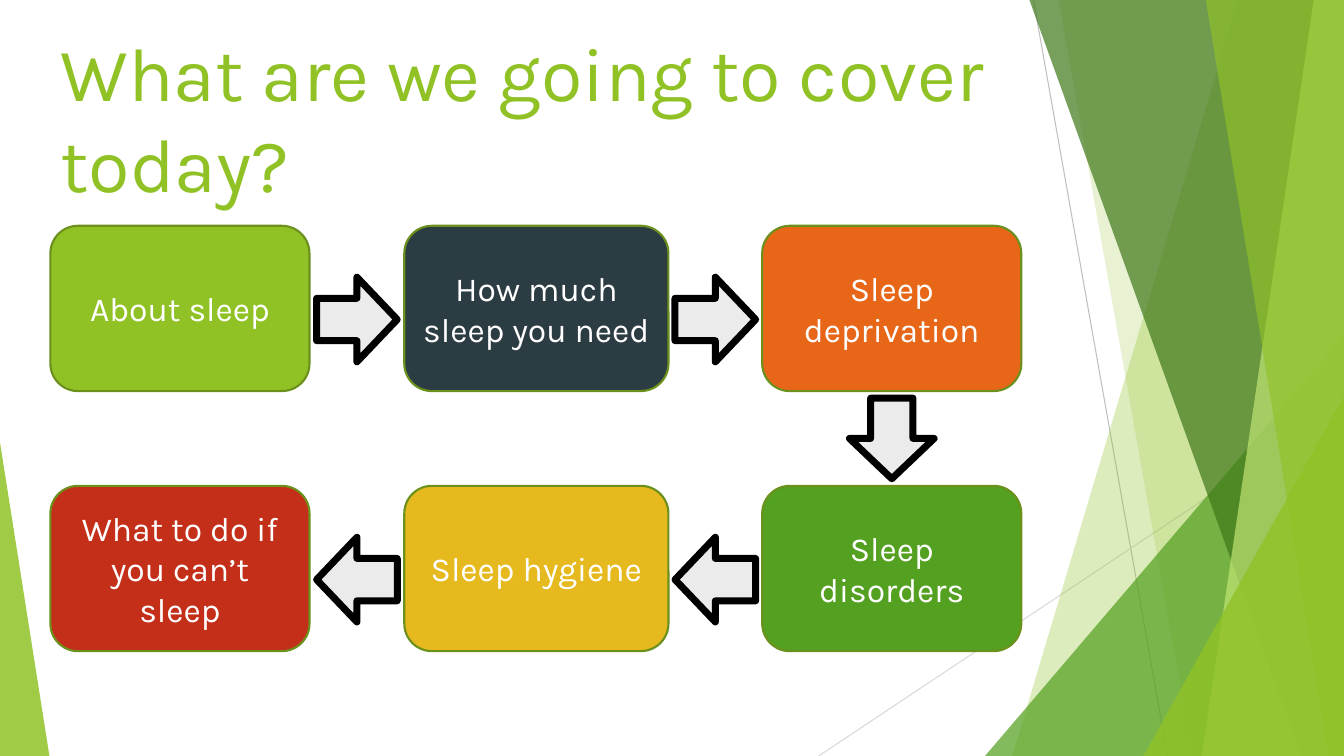
"""Build the agenda slide: six sleep topics in a looping flow beside green facets."""
from lxml.etree import SubElement
from pptx import Presentation
from pptx.dml.color import RGBColor
from pptx.enum.shapes import MSO_CONNECTOR, MSO_SHAPE
from pptx.enum.text import MSO_ANCHOR, MSO_AUTO_SIZE, PP_ALIGN
from pptx.oxml.ns import qn
from pptx.util import Inches, Pt

COLOURS = {
    "lime": "90C226", "green": "54A021", "forest": "3F7819", "pale": "C0E474",
    "slate": "2C3C43", "orange": "E76618", "gold": "E6B91E", "red": "C42F1A",
    "edge": "6B901C", "arrow": "EBEBEB", "black": "000000", "white": "FFFFFF",
    "grey": "BFBFBF", "silver": "D9D9D9",
}
WIDTH, HEIGHT = 13.33, 7.5


def paint(shape, fill, opacity=100, line=None, weight=0):
    """Fill and outline a shape, without shadow."""
    shape.shadow.inherit = False
    shape.fill.solid()
    shape.fill.fore_color.rgb = RGBColor.from_string(COLOURS[fill])
    if opacity < 100:
        colour = shape.fill._xPr.find(qn("a:solidFill"))[0]
        SubElement(colour, qn("a:alpha"), val=str(opacity * 1000))
    if line:
        shape.line.color.rgb = RGBColor.from_string(COLOURS[line])
        shape.line.width = Pt(weight)
    else:
        shape.line.fill.background()


def write(para, text, size, colour, align):
    """Add one formatted run to a paragraph."""
    para.alignment = align
    span = para.add_run()
    span.text = text
    span.font.name = "Karla"
    span.font.size = Pt(size)
    span.font.color.rgb = RGBColor.from_string(COLOURS[colour])


deck = Presentation()
deck.slide_width, deck.slide_height = Inches(WIDTH), Inches(HEIGHT)
page = deck.slides.add_slide(deck.slide_layouts[5])
shapes = page.shapes

rays = [
    ("grey", (10.25, 0), (11.58, HEIGHT)),
    ("silver", (WIDTH, 4.03), (8.12, HEIGHT)),
]
for colour, start, end in rays:
    ray = shapes.add_connector(MSO_CONNECTOR.STRAIGHT, *map(Inches, start + end))
    ray.line.color.rgb = RGBColor.from_string(COLOURS[colour])
    ray.line.width = Pt(0.75)
    SubElement(ray._element.spPr, qn("a:effectLst"))

bands = [
    ("lime", 30, 12.28, 10.04),
    ("lime", 20, 10.5, 11.83),
    ("green", 72, (9.77, 3.33, 3.56, 4.17), 1),
    ("forest", 70, 10.21, 12.91),
    ("pale", 70, 13.03, 11.92),
    ("lime", 65, 11.96, 13.18),
    ("lime", 80, (11.34, 3.93, 1.99, 3.57), 1),
    ("lime", 85, (0, 4.39, 0.49, 3.11), 0),
]
for colour, opacity, top, bottom in bands:
    if isinstance(top, tuple):
        facet = shapes.add_shape(MSO_SHAPE.ISOSCELES_TRIANGLE, *map(Inches, top))
        facet.adjustments[0] = bottom
    else:
        outline = shapes.build_freeform(Inches(top), 0, scale=1.0)
        corners = [(WIDTH, 0), (WIDTH, HEIGHT), (bottom, HEIGHT)]
        outline.add_line_segments([(Inches(x), Inches(y)) for x, y in corners])
        facet = outline.convert_to_shape()
    paint(facet, colour, opacity)

title = shapes.title
title.left, title.top = Inches(0.5), Inches(0.21)
title.width, title.height = Inches(9.77), Inches(1.92)
frame = title.text_frame
frame.word_wrap = False
frame.auto_size = MSO_AUTO_SIZE.NONE
frame.vertical_anchor = MSO_ANCHOR.TOP
write(frame.paragraphs[0], "What are we going to cover", 54, "lime", PP_ALIGN.LEFT)
write(frame.add_paragraph(), "today?", 54, "lime", PP_ALIGN.LEFT)

columns = [(0.5, 2.57), (4.01, 2.62), (7.56, 2.57)]
rows = [2.24, 4.82]
box_height = 1.64
topics = [
    ("About sleep", "lime", 0, 0),
    ("How much sleep you need", "slate", 1, 0),
    ("Sleep deprivation", "orange", 2, 0),
    ("Sleep disorders", "green", 2, 1),
    ("Sleep hygiene", "gold", 1, 1),
    ("What to do if you can’t sleep", "red", 0, 1),
]
for text, colour, column, row in topics:
    left, width = columns[column]
    box = shapes.add_shape(MSO_SHAPE.ROUNDED_RECTANGLE, Inches(left),
                           Inches(rows[row]), Inches(width), Inches(box_height))
    paint(box, colour, line="edge", weight=1.5)
    box.text_frame.word_wrap = True
    box.text_frame.vertical_anchor = MSO_ANCHOR.MIDDLE
    write(box.text_frame.paragraphs[0], text, 24, "white", PP_ALIGN.CENTER)

arrow_width, arrow_height, arrow_drop = 0.8, 0.84, 0.11
gaps = [(left + width + after) / 2
        for (left, width), (after, _) in zip(columns, columns[1:])]
middles = [top + box_height / 2 + arrow_drop for top in rows]
arrows = [(x, y, turn) for y, turn in zip(middles, (0, 180)) for x in gaps]
last_left, last_width = columns[-1]
arrows.append((last_left + last_width / 2, (rows[0] + box_height + rows[1]) / 2, 90))
for x, y, turn in arrows:
    arrow = shapes.add_shape(
        MSO_SHAPE.RIGHT_ARROW, Inches(x - arrow_width / 2), Inches(y - arrow_height / 2),
        Inches(arrow_width), Inches(arrow_height))
    arrow.rotation = turn
    paint(arrow, "arrow", line="black", weight=5)

deck.save("out.pptx")
